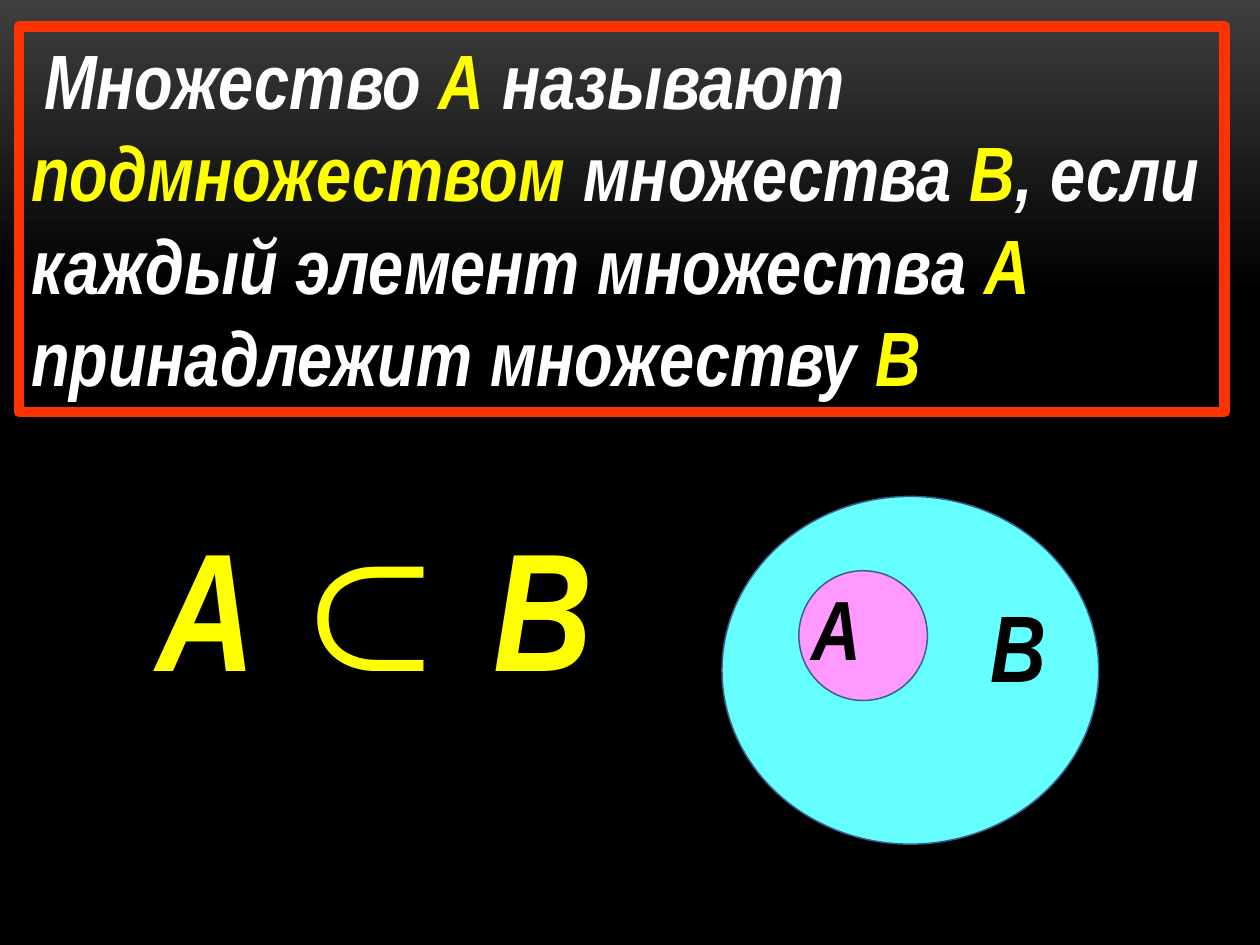
from dataclasses import dataclass

from pptx import Presentation
from pptx.dml.color import RGBColor
from pptx.enum.shapes import MSO_SHAPE
from pptx.enum.text import MSO_ANCHOR, PP_ALIGN
from pptx.util import Inches, Pt

RECT, OVAL = MSO_SHAPE.RECTANGLE, MSO_SHAPE.OVAL
TOP, LEFT = MSO_ANCHOR.TOP, PP_ALIGN.LEFT


@dataclass(frozen=True)
class Theme:
    font: str = "Arial Narrow"
    black: str = "000000"
    glow: str = "3F3F3F"
    white: str = "FFFFFF"
    accent: str = "FFFF00"
    frame: str = "FF3300"
    outer: str = "66FFFF"
    inner: str = "FF99FF"
    outline: str = "3A5F8C"
    indent_size: int = 32
    definition_size: int = 44
    inner_size: int = 48
    outer_size: int = 54
    formula_size: int = 96


THEME = Theme()
WIDTH, HEIGHT = 10, 7.5

# Content: (text, is a key term)
DEFINITION = [
    ("Множество ", False), ("А", True), (" называют ", False),
    ("подмножеством", True), (" множества ", False), ("В", True),
    (", если каждый элемент множества ", False), ("А", True),
    (" принадлежит множеству ", False), ("В", True),
]
# (text, italic)
FORMULA = [("A ", True), ("⊂ ", False), ("B", True)]

# Places: left, top, width, height in inches
DEFINITION_BOX = (0.15, 0.21, 9.57, 3.06)
FORMULA_BOX = (1.14, 3.95, 3.91, 1.72)
# (box, fill, line colour, line width)
SETS = [
    ((5.73, 3.94, 2.99, 2.76), THEME.outer),
    ((6.34, 4.53, 1.02, 1.03), THEME.inner),
]
SET_LABELS = [
    ("B", (7.76, 4.62, 0.55, 1.01), THEME.outer_size),
    ("A", (6.34, 4.53, 0.55, 0.91), THEME.inner_size),
]


def rgb(color):
    return RGBColor.from_string(color)


def add_outlined(slide, kind, box, fill, line, width):
    shape = slide.shapes.add_shape(kind, *map(Inches, box))
    shape.shadow.inherit = False
    if fill:
        shape.fill.solid()
        shape.fill.fore_color.rgb = rgb(fill)
    else:
        shape.fill.background()
    shape.line.color.rgb = rgb(line)
    shape.line.width = Pt(width)
    return shape


def write(shape, runs, size, color):
    """Fill a shape with one paragraph of (text, font overrides) runs."""
    frame = shape.text_frame
    frame.word_wrap = True
    frame.vertical_anchor = TOP
    paragraph = frame.paragraphs[0]
    paragraph.alignment = LEFT
    font = paragraph.font
    font.name, font.size = THEME.font, Pt(size)
    font.bold = font.italic = True
    for text, look in runs:
        run = paragraph.add_run()
        run.text = text
        run.font.name = THEME.font
        run.font.size = Pt(look.get("size", size))
        run.font.bold = look.get("bold", True)
        run.font.italic = look.get("italic", True)
        run.font.color.rgb = rgb(look.get("color", color))


def add_text(slide, box, runs, size, color):
    write(slide.shapes.add_textbox(*map(Inches, box)), runs, size, color)


def main():
    deck = Presentation()
    deck.slide_width, deck.slide_height = Inches(WIDTH), Inches(HEIGHT)
    slide = deck.slides.add_slide(deck.slide_layouts[6])

    # Background fading down to black
    backdrop = slide.background.fill
    backdrop.gradient()
    backdrop.gradient_angle = 270
    for stop, (position, color) in zip(
            backdrop.gradient_stops, [(0, THEME.glow), (0.31, THEME.black)]):
        stop.position = position
        stop.color.rgb = rgb(color)

    # Framed definition
    definition = add_outlined(slide, RECT, DEFINITION_BOX, None, THEME.frame, 6)
    indent = (" ", {"size": THEME.indent_size, "bold": False, "italic": False})
    terms = [(text, {"color": THEME.accent} if key else {}) for text, key in DEFINITION]
    write(definition, [indent] + terms, THEME.definition_size, THEME.white)

    # Set diagram
    for box, fill in SETS:
        add_outlined(slide, OVAL, box, fill, THEME.outline, 0.85)
    for letter, box, size in SET_LABELS:
        add_text(slide, box, [(letter, {})], size, THEME.black)

    # Formula
    symbols = [(text, {"italic": italic}) for text, italic in FORMULA]
    add_text(slide, FORMULA_BOX, symbols, THEME.formula_size, THEME.accent)

    deck.save("out.pptx")


if __name__ == "__main__":
    main()
